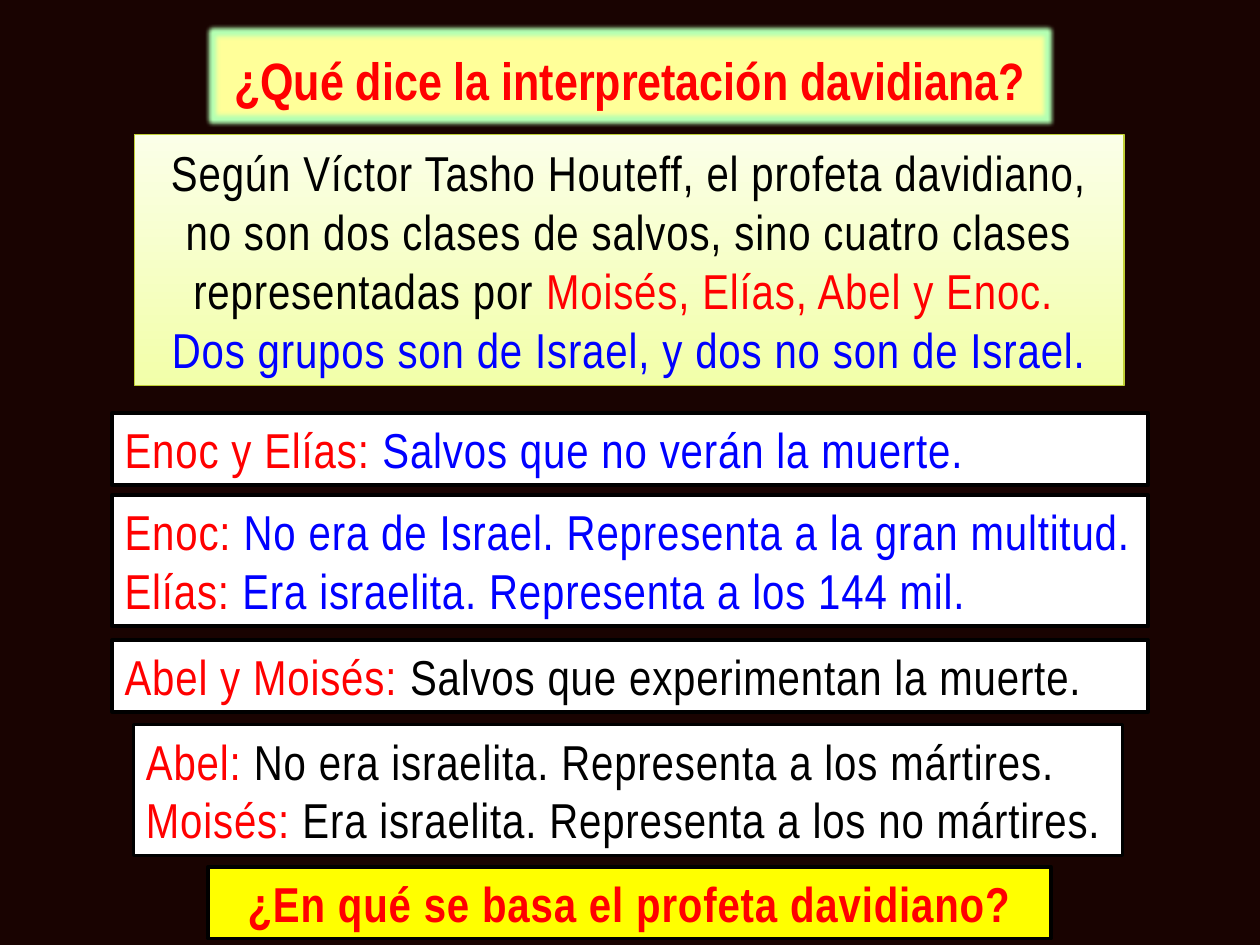
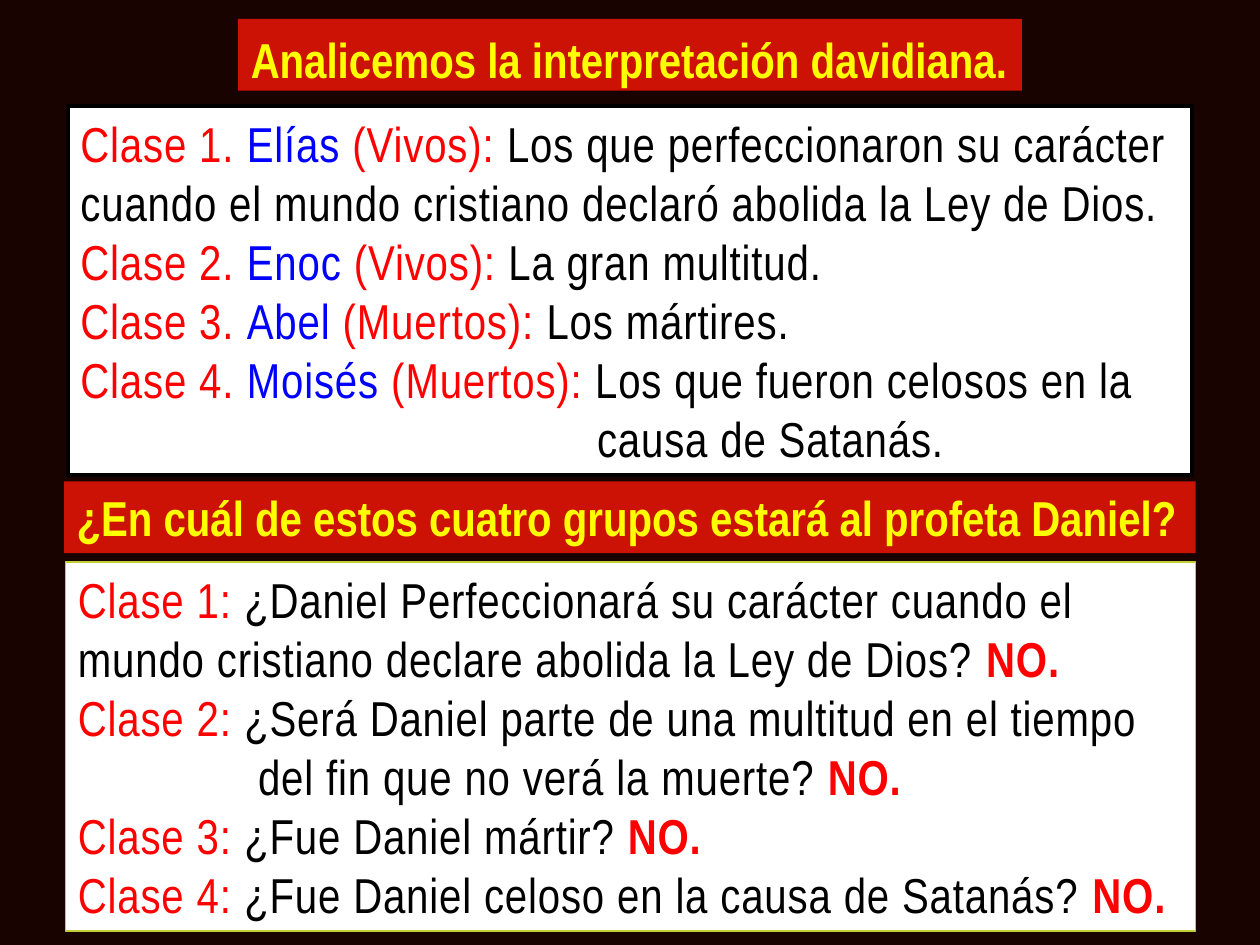
"""Build two slides about the Davidian interpretation of the saved."""
import lxml.etree
import pptx
import pptx.dml.color
import pptx.enum.shapes
import pptx.enum.text
import pptx.oxml.ns
import pptx.util

Inches = pptx.util.Inches
Pt = pptx.util.Pt
ALIGN = pptx.enum.text.PP_ALIGN
ANCHOR = pptx.enum.text.MSO_ANCHOR

FONT = "Arial Narrow"
COLORS = {
    "background": "190301", "white": "FFFFFF", "black": "000000",
    "red": "FF0000", "blue": "0000FF", "yellow": "FFFF00",
    "cream": "FFFF99", "glow": "B3FFB3", "band": "CC1204",
    "olive": "BFCE35", "lime": "F2FFA9", "pale lime": "FBFFE8",
}


def rgb(name):
    return pptx.dml.color.RGBColor.from_string(COLORS[name])


def write(shape, paragraphs, size=28, bold=False, align=ALIGN.LEFT,
          spacing=0.5, anchor=ANCHOR.MIDDLE, line_spacing=None, indents=None):
    """Fill a shape with paragraphs, each a list of (text, colour[, bold])."""
    frame = shape.text_frame
    frame.word_wrap = True
    frame.auto_size = pptx.enum.text.MSO_AUTO_SIZE.NONE
    frame.vertical_anchor = anchor
    for number, runs in enumerate(paragraphs):
        paragraph = frame.add_paragraph() if number else frame.paragraphs[0]
        paragraph.alignment = align
        paragraph.line_spacing = line_spacing
        paragraph.font.name = FONT
        paragraph.font.size = Pt(size)
        paragraph.font.bold = bold
        if indents and number in indents:
            properties = paragraph._p.get_or_add_pPr()
            properties.set("marL", str(Inches(indents[number])))
            properties.set("indent", "0")
        for text, color, *emphasis in runs:
            run = paragraph.add_run()
            run.text = text
            run.font.color.rgb = rgb(color)
            if emphasis:
                run.font.bold = emphasis[0]
            run._r.get_or_add_rPr().set("spc", str(int(spacing * 100)))


def paint(shape, fill, line=None, width=2):
    shape.fill.solid()
    shape.fill.fore_color.rgb = rgb(fill)
    if line:
        shape.line.color.rgb = rgb(line)
        shape.line.width = Pt(width)
    else:
        shape.line.fill.background()


def add_panel(slide, box, paragraphs, fill="white", line="black", width=2, **style):
    panel = slide.shapes.add_shape(
        pptx.enum.shapes.MSO_SHAPE.RECTANGLE, *map(Inches, box))
    panel.shadow.inherit = False
    paint(panel, fill, line, width)
    write(panel, paragraphs, **style)
    return panel


def add_titled_slide(deck, title, box, fill, color, **style):
    slide = deck.slides.add_slide(deck.slide_layouts[5])
    heading = slide.shapes.title
    heading.left, heading.top, heading.width, heading.height = map(Inches, box)
    paint(heading, fill)
    write(heading, [[(title, color)]], bold=True, spacing=0,
          anchor=ANCHOR.TOP, **style)
    return slide


def add_glow(shape, color, radius, soft_edge):
    qn = pptx.oxml.ns.qn
    effects = lxml.etree.SubElement(shape._element.spPr, qn("a:effectLst"))
    glow = lxml.etree.SubElement(effects, qn("a:glow"), rad=str(Pt(radius)))
    lxml.etree.SubElement(glow, qn("a:srgbClr"), val=COLORS[color])
    lxml.etree.SubElement(effects, qn("a:softEdge"), rad=str(Pt(soft_edge)))


def shade(shape, bottom, top):
    shape.fill.gradient()
    shape.fill.gradient_angle = 90
    for stop, color in zip(shape.fill.gradient_stops, (bottom, top)):
        stop.color.rgb = rgb(color)
    shape.fill.gradient_stops[0].position = 0
    shape.fill.gradient_stops[1].position = 1


def build_interpretation(deck):
    slide = add_titled_slide(
        deck, "¿Qué dice la interpretación davidiana?", (1.69, 0.26, 6.62, 0.68),
        "cream", "red", size=30, align=ALIGN.CENTER, line_spacing=1.15)
    add_glow(slide.shapes.title, "glow", 5, 2.5)

    summary = add_panel(slide, (1.07, 1.07, 7.85, 1.99), [
        [("Según Víctor Tasho Houteff, el profeta davidiano, no son dos clases "
          "de salvos, sino cuatro clases representadas por ", "black"),
         ("Moisés, Elías, Abel y Enoc. ", "red")],
        [("Dos grupos son de Israel, y dos no son de Israel.", "blue")],
    ], line="olive", width=0.75, align=ALIGN.CENTER)
    shade(summary, "lime", "pale lime")

    groups = [
        ((0.89, 3.28, 8.22, 0.57), "blue",
         [("Enoc y Elías: ", "Salvos que no verán la muerte.")]),
        ((0.89, 3.93, 8.22, 1.04), "blue",
         [("Enoc: ", "No era de Israel. Representa a la gran multitud."),
          ("Elías: ", "Era israelita. Representa a los 144 mil.")]),
        ((0.89, 5.08, 8.22, 0.57), "black",
         [("Abel y Moisés: ", "Salvos que experimentan la muerte.")]),
        ((1.06, 5.75, 7.85, 1.04), "black",
         [("Abel: ", "No era israelita. Representa a los mártires."),
          ("Moisés: ", "Era israelita. Representa a los no mártires.")]),
    ]
    for box, color, entries in groups:
        add_panel(slide, box, [[(name, "red"), (meaning, color)]
                               for name, meaning in entries])

    add_panel(slide, (1.65, 6.88, 6.69, 0.57),
              [[("¿En qué se basa el profeta davidiano?", "red")]],
              fill="yellow", bold=True, align=ALIGN.CENTER)


def build_analysis(deck):
    slide = add_titled_slide(
        deck, "Analicemos la interpretación davidiana.", (1.89, 0.15, 6.22, 0.57),
        "band", "yellow", line_spacing=1.07)

    classes = [
        ("Elías", "Vivos", "Los que perfeccionaron su carácter cuando el mundo "
                           "cristiano declaró abolida la Ley de Dios."),
        ("Enoc", "Vivos", "La gran multitud."),
        ("Abel", "Muertos", "Los mártires."),
        ("Moisés", "Muertos", "Los que fueron celosos en la"),
    ]
    definitions = [
        [(f"Clase {number}. ", "red"), (name, "blue"),
         (f" ({state}): ", "red"), (meaning, "black")]
        for number, (name, state, meaning) in enumerate(classes, 1)]
    definitions.append([("causa de Satanás.", "black")])
    add_panel(slide, (0.54, 0.84, 8.92, 2.93), definitions, indents={4: 4.1})

    add_panel(slide, (0.51, 3.82, 8.98, 0.57),
              [[("¿En cuál de estos cuatro grupos estará al profeta Daniel?", "yellow")]],
              fill="band", line=None, bold=True, spacing=0, anchor=ANCHOR.TOP)

    answer = ("NO.", "red", True)
    add_panel(slide, (0.52, 4.46, 8.97, 2.93), [
        [("Clase 1: ", "red"),
         ("¿Daniel Perfeccionará su carácter cuando el mundo cristiano "
          "declare abolida la Ley de Dios? ", "black"), answer],
        [("Clase 2: ", "red"),
         ("¿Será Daniel parte de una multitud en el tiempo", "black")],
        [("del fin que no verá la muerte? ", "black"), answer],
        [("Clase 3: ", "red"), ("¿Fue Daniel mártir? ", "black"), answer],
        [("Clase 4: ", "red"),
         ("¿Fue Daniel celoso en la causa de Satanás? ", "black"), answer],
    ], line="olive", width=0.75, indents={2: 1.43})


def main():
    deck = pptx.Presentation()
    deck.slide_width, deck.slide_height = Inches(10), Inches(7.5)
    backdrop = deck.slide_master.background.fill
    backdrop.solid()
    backdrop.fore_color.rgb = rgb("background")
    build_interpretation(deck)
    build_analysis(deck)
    deck.save("out.pptx")


if __name__ == "__main__":
    main()
